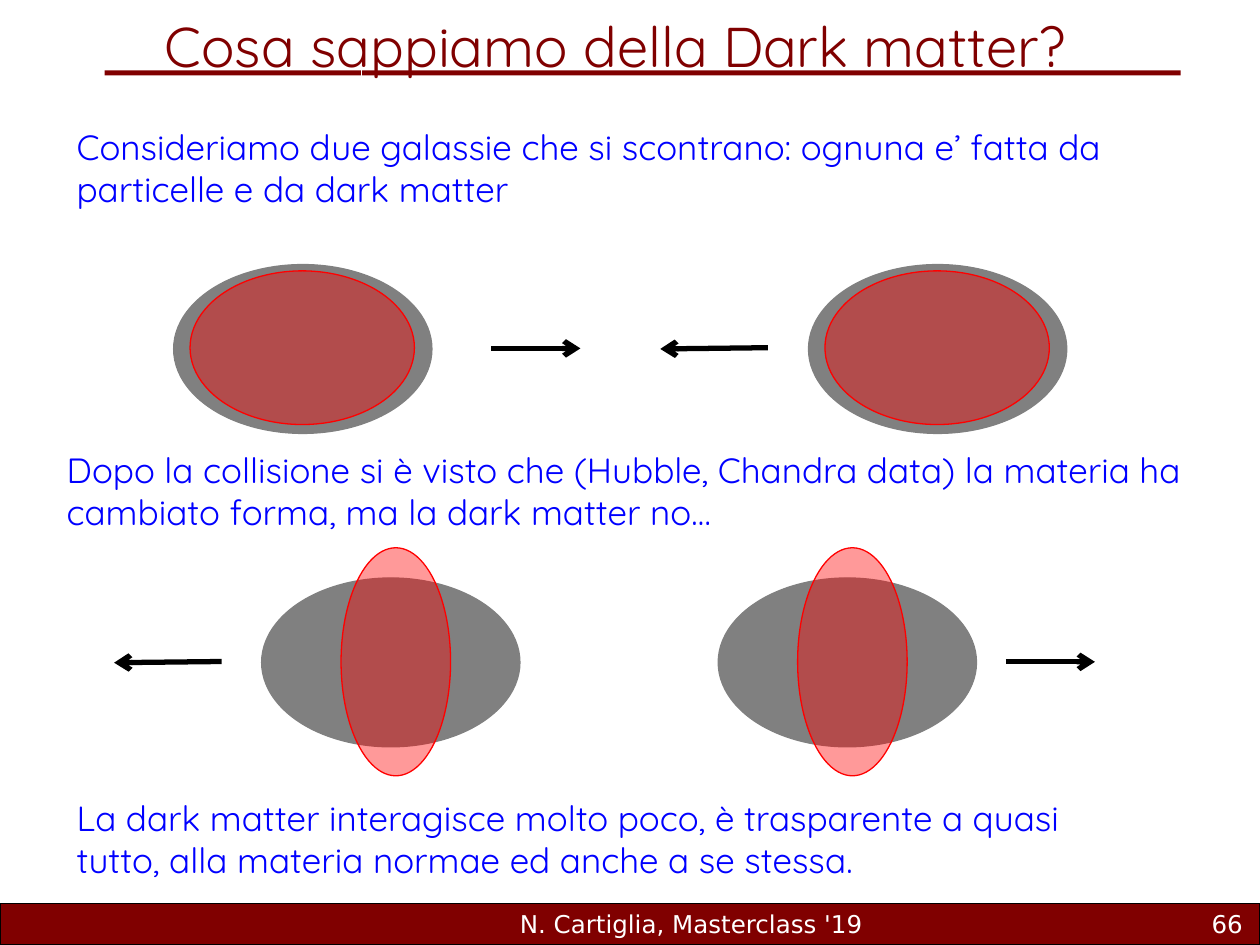
from lxml import etree
from pptx import Presentation
from pptx.dml.color import RGBColor
from pptx.enum.shapes import MSO_CONNECTOR, MSO_SHAPE
from pptx.enum.text import MSO_ANCHOR, PP_ALIGN
from pptx.oxml.ns import qn
from pptx.util import Pt

STRAIGHT = MSO_CONNECTOR.STRAIGHT
RECT, OVAL = MSO_SHAPE.RECTANGLE, MSO_SHAPE.OVAL
LEFT, CENTER, RIGHT = PP_ALIGN.LEFT, PP_ALIGN.CENTER, PP_ALIGN.RIGHT
TOP, MIDDLE = MSO_ANCHOR.TOP, MSO_ANCHOR.MIDDLE

COLORS = {
    "maroon": "800000",
    "blue": "0000FF",
    "gray": "808080",
    "red": "FF0000",
    "black": "000000",
    "white": "FFFFFF",
}
BODY_FONT, FOOTER_FONT = "Quicksand", "DejaVu Sans"

HALO_SIZE = (147.6, 96.5)
# Matter ellipse relative to its halo: left, top, width, height
MATTER_BEFORE = (9.4, 3.6, 128.2, 87.8)
MATTER_AFTER = (45.4, -17.3, 62.6, 130.3)


def rgb(name):
    return RGBColor.from_string(COLORS[name])


def add_shape(shapes, kind, box, fill, line=None, alpha=None):
    """Add a preset shape; alpha is the fill opacity in percent."""
    sp = shapes.add_shape(kind, *map(Pt, box))
    sp.shadow.inherit = False
    sp.fill.solid()
    sp.fill.fore_color.rgb = rgb(fill)
    if alpha is not None:
        color = sp.fill._xPr.find(qn("a:solidFill"))[0]
        etree.SubElement(color, qn("a:alpha"), val=str(alpha * 1000))
    if line:
        sp.line.color.rgb = rgb(line)
        sp.line.width = Pt(0.75)
    else:
        sp.line.fill.background()


def add_text(shapes, box, text, size, color, font=BODY_FONT, align=LEFT, anchor=TOP):
    tf = shapes.add_textbox(*map(Pt, box)).text_frame
    tf.word_wrap = True
    tf.vertical_anchor = anchor
    tf.text = text
    p = tf.paragraphs[0]
    p.alignment = align
    r = p.runs[0]
    r.font.size = Pt(size)
    r.font.name = font
    r.font.color.rgb = rgb(color)


def add_line(shapes, start, end, color, width, arrow=False):
    cxn = shapes.add_connector(STRAIGHT, *map(Pt, start + end))
    cxn.line.color.rgb = rgb(color)
    cxn.line.width = Pt(width)
    if arrow:
        etree.SubElement(cxn.line._get_or_add_ln(), qn("a:tailEnd"), type="arrow")
    etree.SubElement(cxn._element.spPr, qn("a:effectLst"))


def add_galaxy(shapes, left, top, matter):
    """Group a dark matter halo with the ordinary matter over it."""
    group = shapes.add_group_shape().shapes
    dx, dy, width, height = matter
    add_shape(group, OVAL, (left, top, *HALO_SIZE), "gray", "gray")
    add_shape(group, OVAL, (left + dx, top + dy, width, height), "red", "red", alpha=40)


def add_frame(shapes):
    """Footer bar with its texts, and the rule under the title."""
    add_shape(shapes, RECT, (0, 516.25, 720, 23.75), "maroon", "black")
    add_shape(shapes, RECT, (59.75, 40.25, 615, 2.9), "maroon")
    add_text(shapes, (247, 516.25, 296, 23.75), "N. Cartiglia, Masterclass '19",
             14, "white", FOOTER_FONT, CENTER, MIDDLE)
    add_text(shapes, (567.4, 516.25, 149.8, 23.75), "66",
             14, "white", FOOTER_FONT, RIGHT, MIDDLE)
    add_line(shapes, (206.6, 290.9), (206.6, 0), "white", 1)


def main():
    prs = Presentation()
    prs.slide_width, prs.slide_height = Pt(720), Pt(540)
    shapes = prs.slides.add_slide(prs.slide_layouts[6]).shapes

    add_frame(shapes)
    add_text(shapes, (4, 2.9, 696, 46), "Cosa sappiamo della Dark matter?",
             32, "maroon", align=CENTER)

    paragraphs = [
        (36.7, 68.4, 618.5, "Consideriamo due galassie che si scontrano: ognuna e’ fatta da "
                            "particelle e da dark matter"),
        (31, 252.7, 674.6, "Dopo la collisione si è visto che (Hubble, Chandra data) la materia "
                           "ha cambiato forma, ma la dark matter no…"),
        (36.7, 451.4, 618.5, "La dark matter interagisce molto poco, è trasparente a quasi "
                             "tutto, alla materia normae ed anche a se stessa."),
    ]
    for left, top, width, text in paragraphs:
        add_text(shapes, (left, top, width, 80), text, 20, "blue")

    for top, lefts, matter in [(151.2, (99.2, 462), MATTER_BEFORE),
                               (330.3, (149.5, 410.4), MATTER_AFTER)]:
        for left in lefts:
            add_galaxy(shapes, left, top, matter)

    for start, end in [((280.8, 199.1), (331.7, 199.1)),
                       ((438.8, 198.7), (377.3, 199.4)),
                       ((574.8, 378.2), (625.7, 378.2)),
                       ((126.7, 378), (65.2, 378.7))]:
        add_line(shapes, start, end, "black", 3, arrow=True)

    prs.save("out.pptx")


if __name__ == "__main__":
    main()
